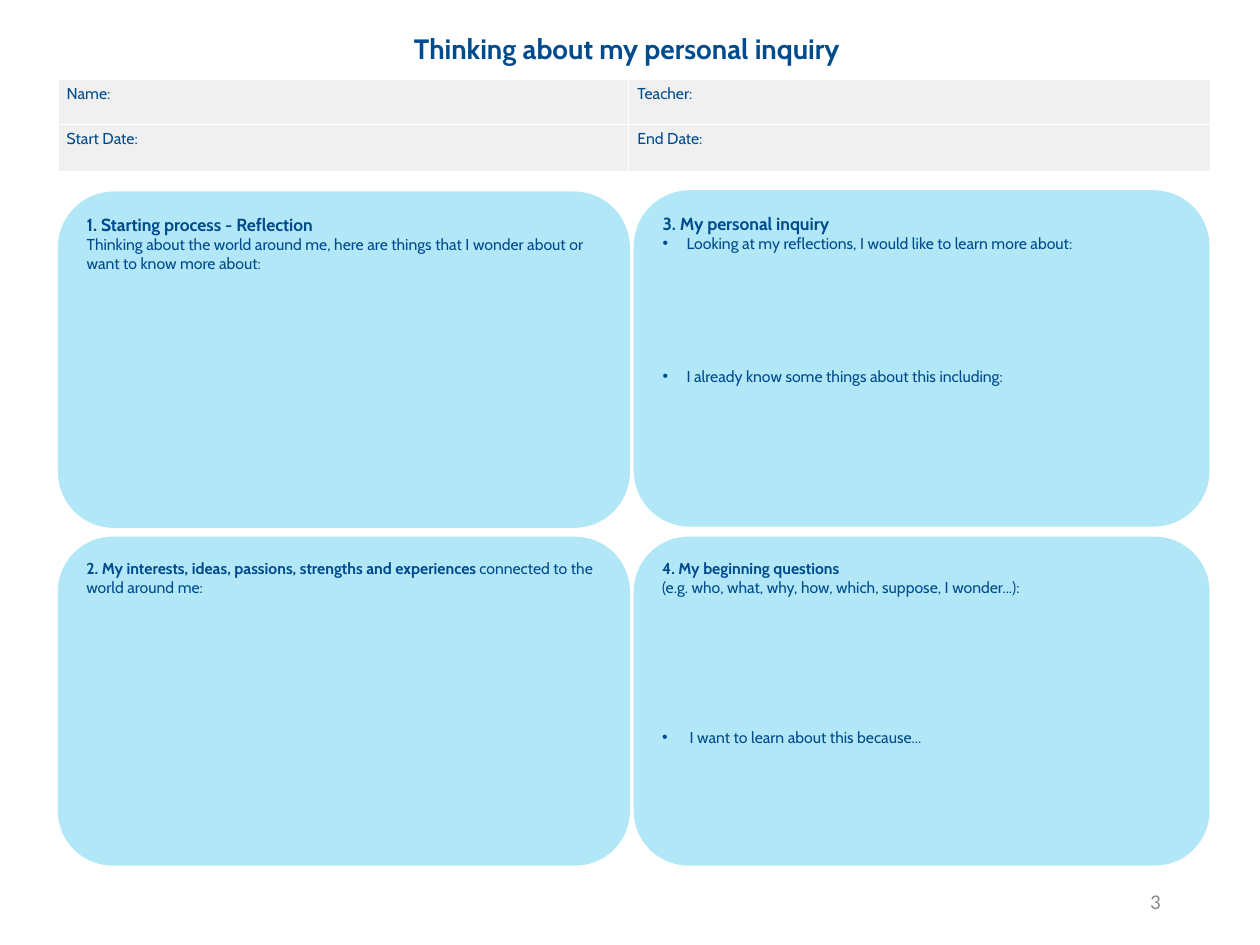
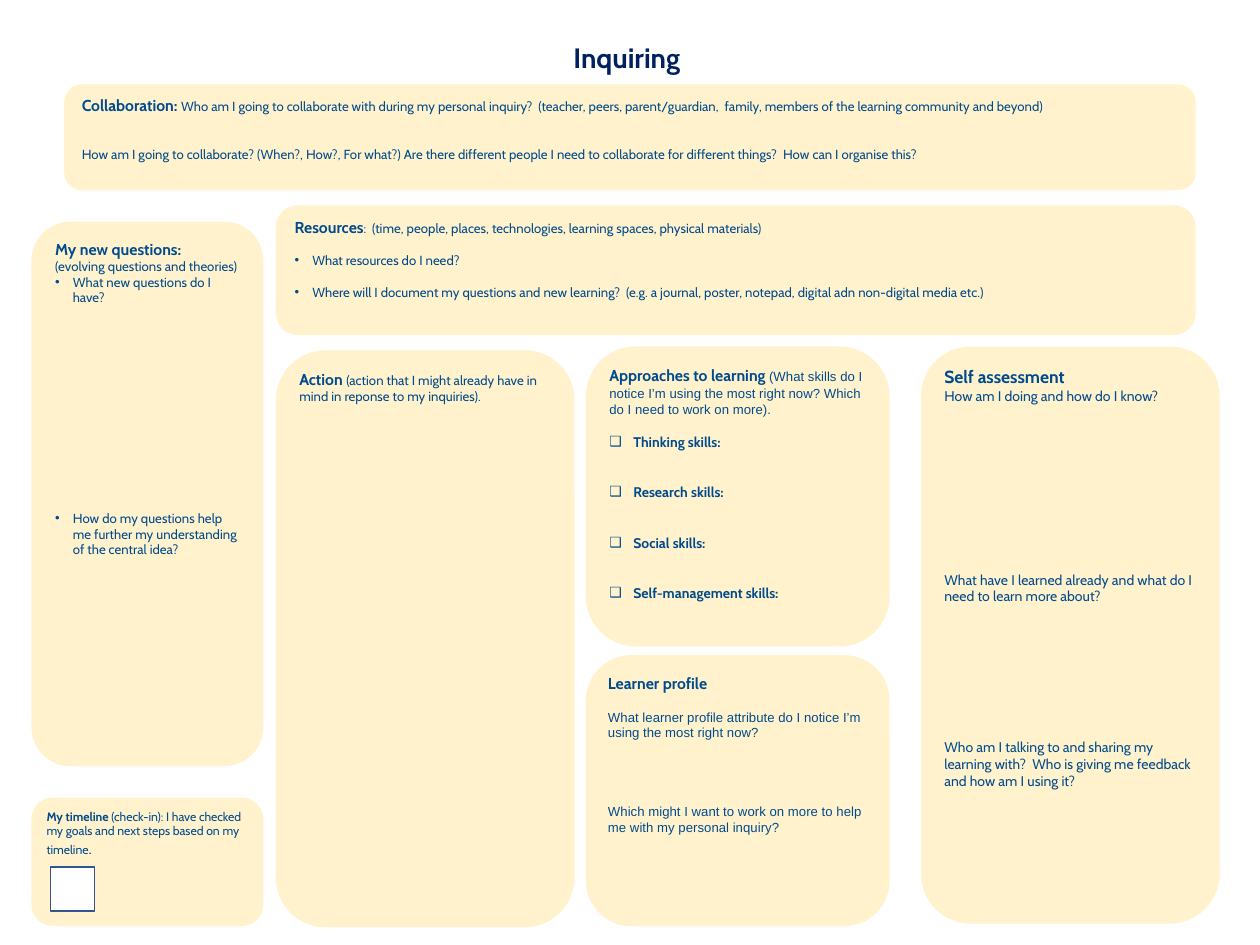
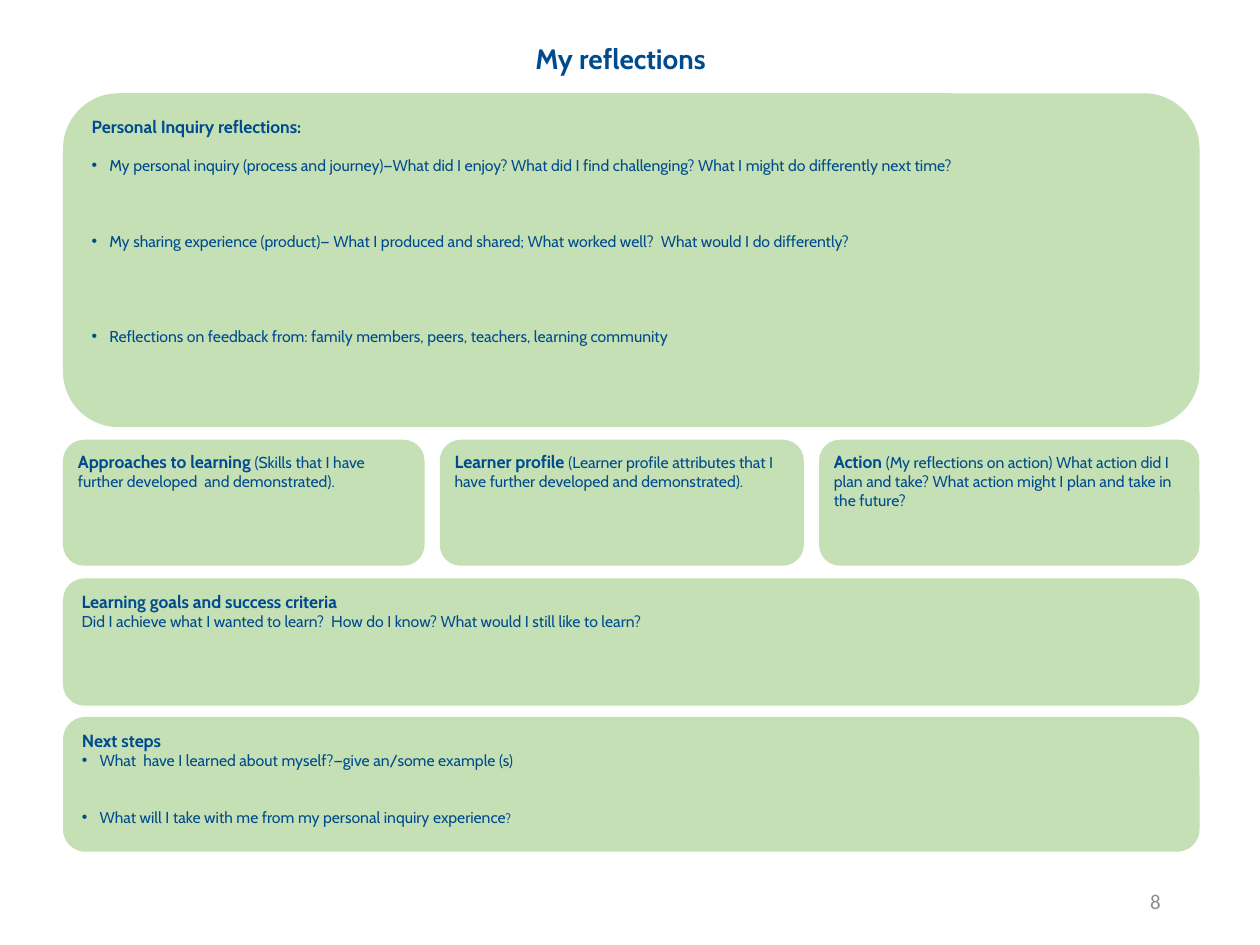
from typing import NamedTuple

from lxml import etree
from pptx import Presentation
from pptx.dml.color import RGBColor
from pptx.enum.shapes import MSO_SHAPE
from pptx.enum.text import MSO_ANCHOR, PP_ALIGN
from pptx.oxml.ns import qn
from pptx.util import Pt

# Shared look
PX = 9144  # 100 px to the inch
BLUE = RGBColor(0x00, 0x4B, 0x8D)
NAVY = RGBColor(0x00, 0x20, 0x60)
SKY = RGBColor(0xB2, 0xE7, 0xF8)
CREAM = RGBColor(0xFF, 0xF2, 0xCC)
GREEN = RGBColor(0xC5, 0xE0, 0xB4)
PALE = RGBColor(0xF0, 0xF0, 0xF0)
GREY = RGBColor(0x8C, 0x8C, 0x8C)
EDGE = RGBColor(0x32, 0x54, 0x91)
WHITE = RGBColor(0xFF, 0xFF, 0xFF)
MAIN, PLAIN, FOOT = "Cabin", "Arial", "Calibri"
ROUND, RECT = MSO_SHAPE.ROUNDED_RECTANGLE, MSO_SHAPE.RECTANGLE
LEFT, MID, RIGHT = PP_ALIGN.LEFT, PP_ALIGN.CENTER, PP_ALIGN.RIGHT
TOP, CENTRE = MSO_ANCHOR.TOP, MSO_ANCHOR.MIDDLE
WIDE, TIGHT = (10, 5), (7, 4)


class Bit(NamedTuple):
    text: str
    size: float = 9
    bold: bool = False
    font: str = MAIN
    color: RGBColor = BLUE


class Para(NamedTuple):
    bits: list[Bit]
    gap: float = 0  # points above
    mark: str = ""
    hang: int = 14
    align: PP_ALIGN = LEFT


class Box(NamedTuple):
    x: int
    y: int
    w: int
    h: int


class Card(NamedTuple):
    box: Box
    paras: list[Para]
    inset: tuple[int, int] = WIDE


def head(text: str, size: float = 10, *rest: Bit) -> Para:
    return Para([Bit(text, size, True), *rest])


def line(text: str, size: float = 9, gap: float = 0, font: str = MAIN) -> Para:
    return Para([Bit(text, size, False, font)], gap)


def dot(text: str, size: float = 9, gap: float = 0, hang: int = 14) -> Para:
    return Para([Bit(text, size)], gap, "•", hang)


def tick(text: str, gap: float) -> Para:
    return Para([Bit(text, 8, True)], gap, "❑", 19)


# Drawing
def place(box: Box) -> tuple[int, ...]:
    return tuple(n * PX for n in box)


def write(frame, paras: list[Para], inset=WIDE, anchor=TOP) -> None:
    frame.word_wrap = True
    frame.vertical_anchor = anchor
    frame.margin_left = frame.margin_right = inset[0] * PX
    frame.margin_top = frame.margin_bottom = inset[1] * PX
    for i, para in enumerate(paras):
        p = frame.paragraphs[0] if i == 0 else frame.add_paragraph()
        p.alignment = para.align
        p.space_before = Pt(para.gap)
        for bit in para.bits:
            run = p.add_run()
            run.text = bit.text
            font = run.font
            font.name, font.size, font.bold = bit.font, Pt(bit.size), bit.bold
            font.color.rgb = bit.color
        if para.mark:
            props = p._p.get_or_add_pPr()
            props.set("marL", str(para.hang * PX))
            props.set("indent", str(-para.hang * PX))
            etree.SubElement(props, qn("a:buFont"), typeface=PLAIN)
            etree.SubElement(props, qn("a:buChar"), char=para.mark)


def label(slide, box: Box, para: Para, anchor=TOP) -> None:
    write(slide.shapes.add_textbox(*place(box)).text_frame, [para], WIDE, anchor)


def title(slide, text: str, y: int, w: int, color: RGBColor = BLUE) -> None:
    label(slide, Box(0, y, w, 37), Para([Bit(text, 16, True, MAIN, color)], align=MID))


def number(slide, text: str) -> None:
    para = Para([Bit(text, 12, False, FOOT, GREY)], align=RIGHT)
    label(slide, Box(706, 695, 225, 40), para, CENTRE)


def block(slide, kind: MSO_SHAPE, box: Box, fill: RGBColor):
    shape = slide.shapes.add_shape(kind, *place(box))
    shape.shadow.inherit = False
    shape.fill.solid()
    shape.fill.fore_color.rgb = fill
    shape.line.fill.background()
    return shape


def deal(slide, cards: list[Card], fill: RGBColor) -> None:
    for card in cards:
        shape = block(slide, ROUND, card.box, fill)
        write(shape.text_frame, card.paras, card.inset)


def rule(cell) -> None:
    props = cell._tc.get_or_add_tcPr()
    for i, side in enumerate(("a:lnL", "a:lnR", "a:lnT", "a:lnB")):
        edge = etree.Element(qn(side), w=str(Pt(1)))
        fill = etree.SubElement(edge, qn("a:solidFill"))
        etree.SubElement(fill, qn("a:srgbClr"), val=str(WHITE))
        props.insert(i, edge)


def grid(slide, box: Box, cols: list[int], rows: list[int], texts: list[list[str]]) -> None:
    table = slide.shapes.add_table(len(rows), len(cols), *place(box)).table
    table.first_row = table.horz_banding = False
    for col, w in zip(table.columns, cols):
        col.width = w * PX
    for row, h, names in zip(table.rows, rows, texts):
        row.height = h * PX
        for cell, name in zip(row.cells, names):
            write(cell.text_frame, [line(name)])
            cell.margin_left = cell.margin_right = TIGHT[0] * PX
            cell.margin_top = cell.margin_bottom = TIGHT[1] * PX
            cell.fill.solid()
            cell.fill.fore_color.rgb = PALE
            rule(cell)


# Slide content
def think(slide) -> None:
    number(slide, "3")
    title(slide, "Thinking about my personal inquiry", 20, 995)
    deal(slide, [
        Card(Box(46, 152, 454, 267), [
            head("1. Starting process - Reflection"),
            line("Thinking about the world around me, here are things that I wonder "
                 "about or want to know more about:")]),
        Card(Box(46, 426, 454, 261), [
            head("2. My interests, ideas, passions, strengths and experiences ", 9,
                 Bit("connected to the world around me:"))]),
        Card(Box(503, 151, 457, 267), [
            head("3. My personal inquiry"),
            dot("Looking at my reflections, I would like to learn more about:", hang=19),
            dot("I already know some things about this including:", 9, 65, 19)]),
        Card(Box(503, 426, 457, 261), [
            head("4. My beginning questions", 9),
            line("(e.g. who, what, why, how, which, suppose, I wonder...):"),
            dot(" I want to learn about this because...", 9, 74.5, 19)]),
    ], SKY)
    grid(slide, Box(46, 63, 915, 73), [453, 462], [36, 37],
         [["Name:", "Teacher:"], ["Start Date:", "End Date:"]])


def inquire(slide) -> None:
    title(slide, "Inquiring", 27, 995, NAVY)
    deal(slide, [
        Card(Box(51, 67, 898, 84), [
            head("Collaboration: ", 9, Bit(
                "Who am I going to collaborate with during my personal inquiry?  (teacher, "
                "peers, parent/guardian,  family, members of the learning community and "
                "beyond)", 7.5)),
            line("How am I going to collaborate? (When?, How?, For what?) Are there "
                 "different people I need to collaborate for different things?  How can I "
                 "organise this?", 7.5, 18)]),
        Card(Box(25, 176, 184, 432), [
            head("My new questions:", 9),
            line("(evolving questions and theories)", 7.5),
            dot("What new questions do I have?", 7.5),
            dot("How do my questions help me further my understanding of the central "
                "idea?", 7.5, 117)]),
        Card(Box(219, 163, 730, 103), [
            head("Resources", 9, Bit(
                ":  (time, people, places, technologies, learning spaces, physical "
                "materials)", 7.5)),
            dot("What resources do I need?", 7.5, 9),
            dot("Where will I document my questions and new learning?  (e.g. a journal, "
                "poster, notepad, digital adn non-digital media etc.)", 7.5, 9)]),
        Card(Box(25, 633, 184, 102), [
            head("My timeline ", 7, Bit(
                "(check-in): I have checked my goals and next steps based on my timeline",
                7), Bit("."))], TIGHT),
        Card(Box(219, 278, 237, 458), [
            head("Action ", 9, Bit(
                "(action that I might already have in mind in reponse to my inquiries).",
                7.5))], TIGHT),
        Card(Box(465, 275, 241, 238), [
            head("Approaches to learning ", 9, Bit(
                "(What skills do I notice I’m using the most right now? Which do I need to "
                "work on more).", 7.5, False, PLAIN)),
            tick("Thinking skills:", 9.5),
            tick("Research skills:", 19.2),
            tick("Social skills:", 19.2),
            tick("Self-management skills:", 19.2)], TIGHT),
        Card(Box(465, 520, 241, 215), [
            head("Learner profile", 9),
            line("What learner profile attribute do I notice I’m using the most right "
                 "now?", 7.5, 9.5, PLAIN),
            line("Which might I want to work on more to help me with my personal "
                 "inquiry?", 7.5, 36, PLAIN)], TIGHT),
        Card(Box(731, 275, 237, 458), [
            head("Self assessment"),
            line("How am I doing and how do I know?", 8),
            line("What have I learned already and what do I need to learn more about?",
                 8, 95.6),
            line("Who am I talking to and sharing my learning with?  Who is giving me "
                 "feedback and how am I using it?", 8, 76.6)], TIGHT),
    ], CREAM)
    check = block(slide, RECT, Box(40, 688, 35, 35), WHITE)
    check.line.color.rgb = EDGE
    check.line.width = Pt(1)


def reflect(slide) -> None:
    number(slide, "8")
    title(slide, "My reflections", 28, 985)
    deal(slide, [
        Card(Box(50, 74, 902, 265), [
            head("Personal Inquiry reflections:"),
            dot("My personal inquiry (process and journey)—What did I enjoy? What did I "
                "find challenging? What I might do differently next time?", 9, 10.8),
            dot("My sharing experience (product)— What I produced and shared; What worked "
                "well?  What would I do differently?", 9, 32.6),
            dot("Reflections on feedback from: family members, peers, teachers, learning "
                "community", 9, 43.4)]),
        Card(Box(50, 459, 902, 101), [
            head("Learning goals and success criteria"),
            line("Did I achieve what I wanted to learn?  How do I know? What would I "
                 "still like to learn?")]),
        Card(Box(50, 569, 902, 107), [
            head("Next steps"),
            dot("What  have I learned about myself?—give an/some example (s)"),
            Para([Bit("What will I take with me from my personal inquiry experience"),
                  Bit("?", 7.5)], 21.7, "•")]),
    ], GREEN)
    # Row of three, 12 px apart
    x = 50
    for w, name, text in (
        (287, "Approaches to learning ",
         "(Skills that I have further developed  and demonstrated)."),
        (289, "Learner profile ",
         "(Learner profile attributes that I have further developed and demonstrated)."),
        (302, "Action ",
         "(My reflections on action) What action did I plan and take? What action might "
         "I plan and take in the future?"),
    ):
        deal(slide, [Card(Box(x, 349, w, 100), [head(name, 10, Bit(text))], TIGHT)], GREEN)
        x += w + 12


def main() -> None:
    deck = Presentation()
    deck.slide_width, deck.slide_height = 1000 * PX, 750 * PX
    for draw in (think, inquire, reflect):
        draw(deck.slides.add_slide(deck.slide_layouts[6]))
    deck.save("out.pptx")


if __name__ == "__main__":
    main()
